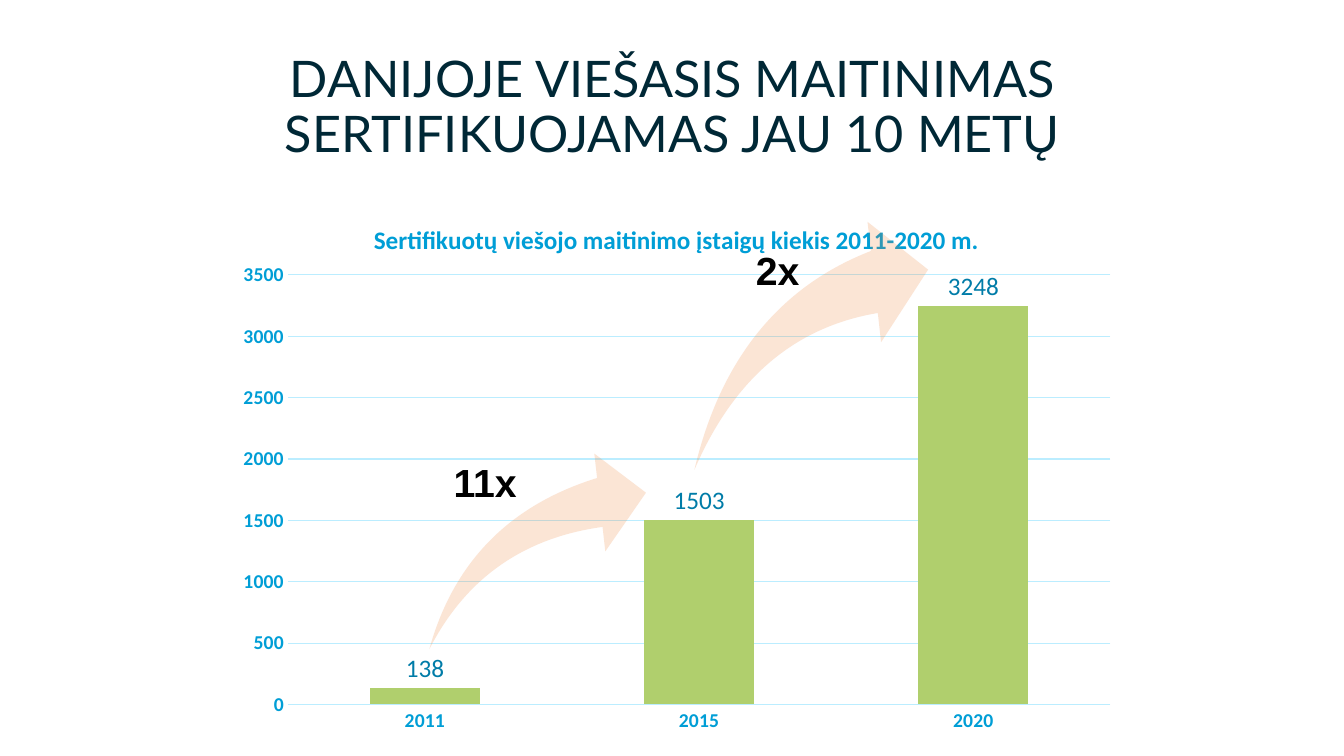
from lxml import etree
from pptx import Presentation
from pptx.chart.data import CategoryChartData
from pptx.dml.color import RGBColor
from pptx.enum.chart import XL_CHART_TYPE as ChartType, XL_LABEL_POSITION as LabelPos, XL_TICK_MARK as Tick
from pptx.enum.shapes import MSO_SHAPE as Shape
from pptx.enum.text import MSO_ANCHOR as Anchor, MSO_AUTO_SIZE as AutoSize, PP_ALIGN as Align
from pptx.oxml.ns import qn
from pptx.util import Cm, Pt

NAVY = RGBColor(0x00, 0x28, 0x36)
BLUE = RGBColor(0x00, 0x9E, 0xD6)
TEAL = RGBColor(0x00, 0x7C, 0xA8)
PALE_BLUE = RGBColor(0xBB, 0xED, 0xFF)
GREEN = RGBColor(0xB0, 0xCF, 0x6D)
ORANGE = RGBColor(0xED, 0x7D, 0x31)
BLACK = RGBColor(0x00, 0x00, 0x00)


def style_font(font, name, size, color, bold=False):
    font.name = name
    font.size = Pt(size)
    font.bold = bold
    font.color.rgb = color


def place(part, left, top, width, height):
    part.left, part.top, part.width, part.height = Cm(left), Cm(top), Cm(width), Cm(height)


def add_heading(slide, wording):
    heading = slide.shapes.title
    place(heading, 2.34, 1.24, 29.21, 3.68)
    frame = heading.text_frame
    frame.word_wrap = True
    frame.auto_size = AutoSize.NONE
    frame.vertical_anchor = Anchor.TOP
    line = frame.paragraphs[0]
    line.alignment = Align.CENTER
    line.line_spacing = 0.9
    run = line.add_run()
    run.text = wording
    style_font(run.font, "Lato", 36, NAVY)


def set_layout(element, **fractions):
    layout = element.find(qn("c:layout"))
    if layout is None:
        layout = etree.Element(qn("c:layout"))
        tx = element.find(qn("c:tx"))
        element.insert(0 if tx is None else 1, layout)
    for child in list(layout):
        layout.remove(child)
    manual = etree.SubElement(layout, qn("c:manualLayout"))
    if "w" in fractions:
        etree.SubElement(manual, qn("c:layoutTarget")).set("val", "inner")
    for mode in ("xMode", "yMode"):
        etree.SubElement(manual, qn(f"c:{mode}")).set("val", "edge")
    for side, fraction in fractions.items():
        etree.SubElement(manual, qn(f"c:{side}")).set("val", str(fraction))


def style_axis(axis):
    axis.major_tick_mark = axis.minor_tick_mark = Tick.NONE
    style_font(axis.tick_labels.font, "Calibri", 14, BLUE, True)


def style_line(line):
    line.color.rgb = PALE_BLUE
    line.width = Pt(0.75)


def add_growth_chart(slide, heading, counts):
    data = CategoryChartData()
    data.categories = list(counts)
    data.add_series("Series 1", list(counts.values()))
    chart = slide.shapes.add_chart(
        ChartType.COLUMN_CLUSTERED, Cm(5.66), Cm(4.93), Cm(22.78), Cm(13.79), data).chart
    chart.has_legend = False
    style_font(chart.font, "Calibri", 10, NAVY)

    chart.has_title = True
    run = chart.chart_title.text_frame.paragraphs[0].add_run()
    run.text = heading
    style_font(run.font, "Calibri", 18, BLUE, True)
    chart.chart_title.include_in_layout = False
    chart_xml = chart.element.find(qn("c:chart"))
    set_layout(chart_xml.find(qn("c:title")), x=0.16, y=0.04)
    set_layout(chart_xml.find(qn("c:plotArea")), x=0.07, y=0.145, w=0.91, h=0.785)

    years, amounts = chart.category_axis, chart.value_axis
    style_axis(years)
    style_line(years.format.line)
    style_axis(amounts)
    amounts.format.line.fill.background()
    amounts.minimum_scale, amounts.maximum_scale, amounts.major_unit = 0, 3500, 500
    style_line(amounts.major_gridlines.format.line)

    plot = chart.plots[0]
    plot.gap_width = 150
    plot.vary_by_categories = False
    fill = plot.series[0].format.fill
    fill.solid()
    fill.fore_color.rgb = GREEN
    plot.has_data_labels = True
    labels = plot.data_labels
    labels.show_value = True
    labels.position = LabelPos.OUTSIDE_END
    style_font(labels.font, "Calibri", 18, TEAL)


def add_growth_arrow(slide, left, top, width, height, head):
    arrow = slide.shapes.add_shape(Shape.SWOOSH_ARROW, Cm(left), Cm(top), Cm(width), Cm(height))
    arrow.shadow.inherit = False
    arrow.adjustments[0], arrow.adjustments[1] = 0.25, head
    arrow.line.fill.background()
    arrow.fill.solid()
    arrow.fill.fore_color.rgb = ORANGE
    color = arrow.fill._xPr.find(f".//{qn('a:srgbClr')}")
    etree.SubElement(color, qn("a:alpha")).set("val", "20000")


def add_factor(slide, wording, left, top, width):
    frame = slide.shapes.add_textbox(Cm(left), Cm(top), Cm(width), Cm(1.45)).text_frame
    frame.word_wrap = True
    frame.auto_size = AutoSize.SHAPE_TO_FIT_TEXT
    run = frame.paragraphs[0].add_run()
    run.text = wording
    style_font(run.font, "Arial", 28, BLACK, True)


def main():
    deck = Presentation()
    deck.slide_width, deck.slide_height = Cm(33.87), Cm(19.05)
    slide = deck.slides.add_slide(deck.slide_layouts[5])
    add_heading(slide, "DANIJOJE VIEŠASIS MAITINIMAS SERTIFIKUOJAMAS JAU 10 METŲ")
    add_growth_chart(slide, "Sertifikuotų viešojo maitinimo įstaigų kiekis 2011-2020 m.",
                     {"2011": 138, "2015": 1503, "2020": 3248})
    add_factor(slide, "11x", 11.18, 11.43, 3.56)
    add_growth_arrow(slide, 10.82, 11.43, 5.46, 4.93, 0.25)
    add_growth_arrow(slide, 17.5, 5.59, 5.89, 6.25, 0.245)
    add_factor(slide, "2x", 18.8, 6.07, 1.65)
    deck.save("out.pptx")


if __name__ == "__main__":
    main()
